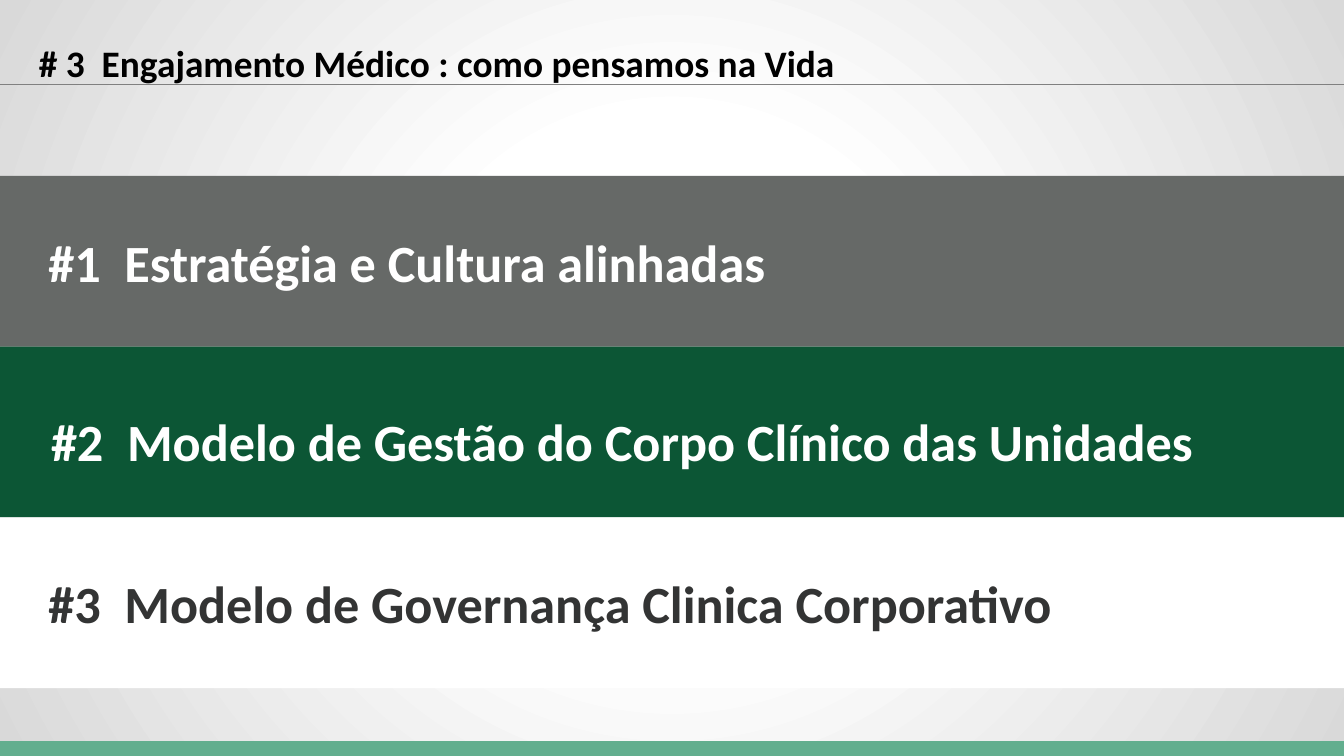
from pptx import Presentation
from pptx.dml.color import RGBColor
from pptx.enum.shapes import MSO_CONNECTOR as Connector, MSO_SHAPE as Shape
from pptx.enum.text import MSO_ANCHOR as Anchor
from pptx.oxml import parse_xml
from pptx.oxml.ns import nsdecls
from pptx.util import Inches, Pt

WIDTH = 10
HEIGHT = WIDTH * 9 / 16
FOOTER_HEIGHT = 0.11
BAND_TOP, BAND_HEIGHT = 1.31, 1.27
GRADIENT_STOPS = [(0, "FFFFFF"), (33, "FFFFFF"), (100, "D9D9D9"), (100, "B3B3B3")]
# Band colour, text colour, text, text left, top and width
BANDS = [
    ("666967", "FFFFFF", "#1  Estratégia e Cultura alinhadas", 0, 1.3, 9.87),
    ("0C5635", "FFFFFF", "#2  Modelo de Gestão do Corpo Clínico das Unidades", 0.02, 2.63, 9.87),
    ("FFFFFF", "333434", "#3  Modelo de Governança Clinica Corporativo", 0, 3.84, 10),
]


def color(hex_string):
    return RGBColor.from_string(hex_string)


class SlideBuilder:
    def __init__(self, slide, font="Calibri"):
        self.slide = slide
        self.font = font

    def radial_background(self, stops):
        stop_xml = "".join(
            f'<a:gs pos="{percent * 1000}"><a:srgbClr val="{value}"/></a:gs>'
            for percent, value in stops
        )
        background = parse_xml(
            f'<p:bg {nsdecls("p", "a")}><p:bgPr><a:gradFill rotWithShape="1">'
            f'<a:gsLst>{stop_xml}</a:gsLst><a:path path="circle">'
            '<a:fillToRect l="50000" t="50000" r="50000" b="50000"/></a:path>'
            '</a:gradFill><a:effectLst/></p:bgPr></p:bg>'
        )
        self.slide.element.cSld.insert(0, background)

    def band(self, top, height, fill):
        """Draw a rectangle across the whole slide width."""
        shape = self.slide.shapes.add_shape(
            Shape.RECTANGLE, 0, Inches(top), Inches(WIDTH), Inches(height)
        )
        shape.shadow.inherit = False
        shape.fill.solid()
        shape.fill.fore_color.rgb = color(fill)
        shape.line.fill.background()

    def rule(self, left, right, y, stroke):
        line = self.slide.shapes.add_connector(
            Connector.STRAIGHT, Inches(left), Inches(y), Inches(right), Inches(y)
        )
        line.line.color.rgb = color(stroke)
        line.line.width = Pt(0.75)
        line._element.spPr.append(parse_xml(f'<a:effectLst {nsdecls("a")}/>'))

    def text(self, content, left, top, width, height, size, fill, inset=0.1):
        """Add bold, bottom-anchored text with the given left inset."""
        box = self.slide.shapes.add_textbox(
            Inches(left), Inches(top), Inches(width), Inches(height)
        )
        frame = box.text_frame
        frame.word_wrap = True
        frame.vertical_anchor = Anchor.BOTTOM
        frame.margin_left = Inches(inset)
        frame.margin_top = frame.margin_right = frame.margin_bottom = Inches(0.1)
        paragraph = frame.paragraphs[0]
        paragraph.text = content
        paragraph.font.name = self.font
        paragraph.font.size = Pt(size)
        paragraph.font.bold = True
        paragraph.font.color.rgb = color(fill)


def main():
    presentation = Presentation()
    presentation.slide_width = Inches(WIDTH)
    presentation.slide_height = Inches(HEIGHT)
    builder = SlideBuilder(presentation.slides.add_slide(presentation.slide_layouts[6]))

    builder.radial_background(GRADIENT_STOPS)
    builder.band(HEIGHT - FOOTER_HEIGHT, FOOTER_HEIGHT, "62AE8E")
    builder.rule(-0.03, WIDTH, 0.63, "808080")
    builder.text("# 3  Engajamento Médico : como pensamos na Vida",
                 0.19, -0.33, 9.21, 1.06, 20, "000000")

    for index, (fill, *_) in enumerate(BANDS):
        builder.band(BAND_TOP + index * BAND_HEIGHT, BAND_HEIGHT, fill)
    for _, text_fill, content, left, top, width in BANDS:
        builder.text(content, left, top, width, 0.98, 28, text_fill, inset=0.36)

    presentation.save("out.pptx")


if __name__ == "__main__":
    main()
